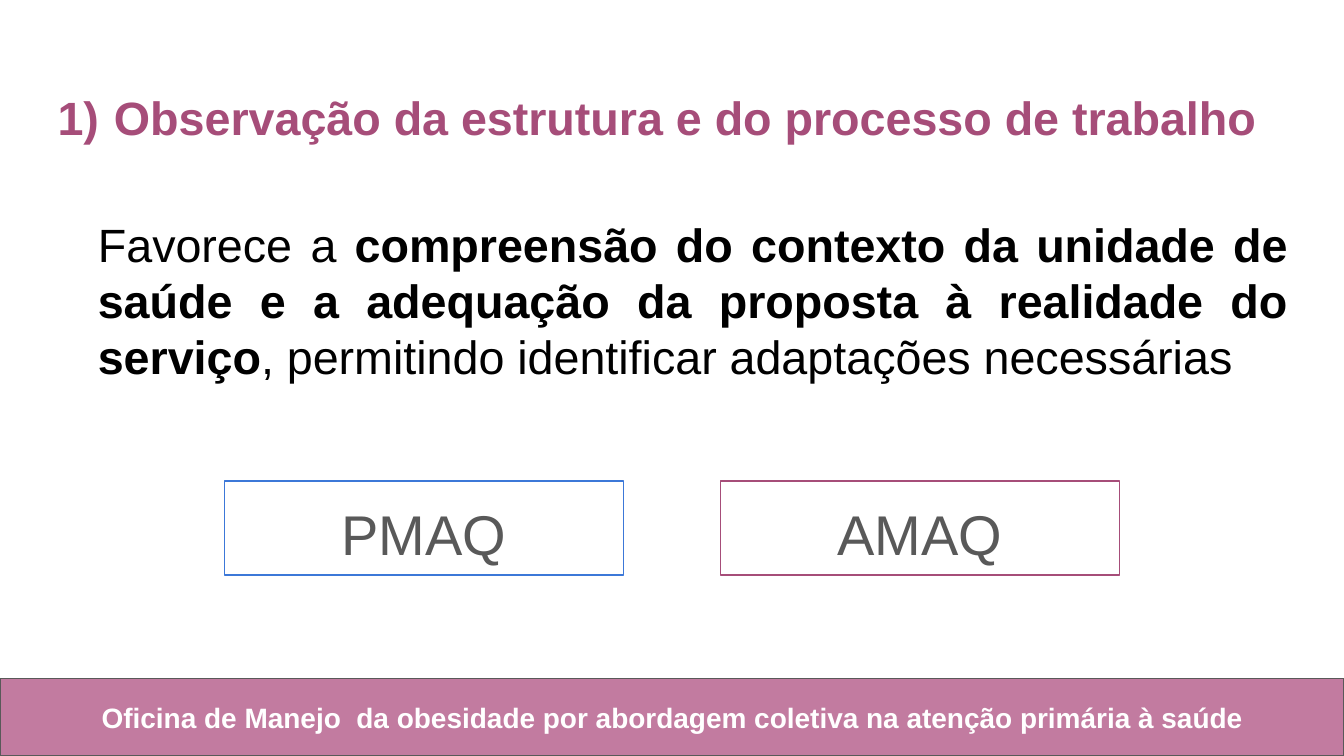
from lxml import etree
from pptx import Presentation
from pptx.dml.color import RGBColor
from pptx.enum.shapes import MSO_SHAPE
from pptx.enum.text import PP_ALIGN
from pptx.oxml.ns import qn
from pptx.util import Inches, Pt

# Content: each run is (text, bold)
TITLE = [("Observação da estrutura e do processo de trabalho", True)]
BODY = [
    ("Favorece a ", False),
    ("compreensão do contexto da unidade de saúde e a adequação da proposta "
     "à realidade do serviço", True),
    (", permitindo identificar adaptações necessárias", False),
]
PROGRAMS = [("PMAQ", "blue"), ("AMAQ", "plum")]
FOOTER = [("Oficina de Manejo  da obesidade por abordagem coletiva "
           "na atenção primária à saúde", True)]

THEME = {
    "font": "Arial",
    "colors": {"plum": "A64D79", "pink": "C27BA0", "blue": "3C78D8",
               "gray": "595959", "black": "000000", "white": "FFFFFF"},
    "sizes": {"text": 25, "program": 30, "footer": 15},
}
WIDTH = 10
HEIGHT = WIDTH * 9 / 16
FOOTER_TOP = 5.05
BOX_WIDTH, BOX_HEIGHT, BOX_TOP, BOX_GAP = 2.97, 0.7, 3.58, 0.72


def color(name):
    return RGBColor.from_string(THEME["colors"][name])


def write_text(shape, runs, *, size, ink, align=PP_ALIGN.LEFT, line_spacing=None):
    frame = shape.text_frame
    frame.word_wrap = True
    frame.margin_left = frame.margin_right = Inches(0.1)
    frame.margin_top = frame.margin_bottom = Inches(0.1)
    paragraph = frame.paragraphs[0]
    paragraph.alignment = align
    if line_spacing:
        paragraph.line_spacing = line_spacing
    for text, bold in runs:
        run = paragraph.add_run()
        run.text = text
        run.font.name = THEME["font"]
        run.font.size = Pt(THEME["sizes"][size])
        run.font.bold = bold
        run.font.color.rgb = color(ink)
    return paragraph


def add_text(slide, place, runs, **text_format):
    box = slide.shapes.add_textbox(*map(Inches, place))
    return write_text(box, runs, **text_format)


def add_rectangle(slide, place, *, line, fill=None):
    shape = slide.shapes.add_shape(MSO_SHAPE.RECTANGLE, *map(Inches, place))
    shape.shadow.inherit = False
    shape.line.color.rgb = color(line)
    shape.line.width = Pt(0.75)
    if fill:
        shape.fill.solid()
        shape.fill.fore_color.rgb = color(fill)
    else:
        shape.fill.background()
    return shape


def number_paragraph(paragraph, ink):
    properties = paragraph._p.get_or_add_pPr()
    properties.set("marL", str(Inches(0.5)))
    properties.set("indent", str(Inches(-0.42)))
    bullet_color = etree.SubElement(properties, qn("a:buClr"))
    etree.SubElement(bullet_color, qn("a:srgbClr"), val=THEME["colors"][ink])
    etree.SubElement(properties, qn("a:buAutoNum"), type="arabicParenR")


presentation = Presentation()
presentation.slide_width = Inches(WIDTH)
presentation.slide_height = Inches(HEIGHT)
slide = presentation.slides.add_slide(presentation.slide_layouts[6])

# Footer band
add_rectangle(slide, (0, FOOTER_TOP, WIDTH, HEIGHT - FOOTER_TOP),
              line="gray", fill="pink")
add_text(slide, (0.34, 5.11, 9.33, 0.45), FOOTER, size="footer", ink="white",
         align=PP_ALIGN.CENTER)

# Numbered title and explanation
title = add_text(slide, (0.25, 0.56, 9.66, 0.7), TITLE, size="text", ink="plum")
number_paragraph(title, "plum")
add_text(slide, (0.63, 1.51, 9.05, 1.46), BODY, size="text", ink="black",
         align=PP_ALIGN.JUSTIFY)

# Program boxes, centred as a row
row_width = len(PROGRAMS) * BOX_WIDTH + (len(PROGRAMS) - 1) * BOX_GAP
row_left = (WIDTH - row_width) / 2
for index, (name, outline) in enumerate(PROGRAMS):
    left = row_left + index * (BOX_WIDTH + BOX_GAP)
    box = add_rectangle(slide, (left, BOX_TOP, BOX_WIDTH, BOX_HEIGHT), line=outline)
    write_text(box, [(name, False)], size="program", ink="gray",
               align=PP_ALIGN.CENTER, line_spacing=1.15)

presentation.save("out.pptx")
